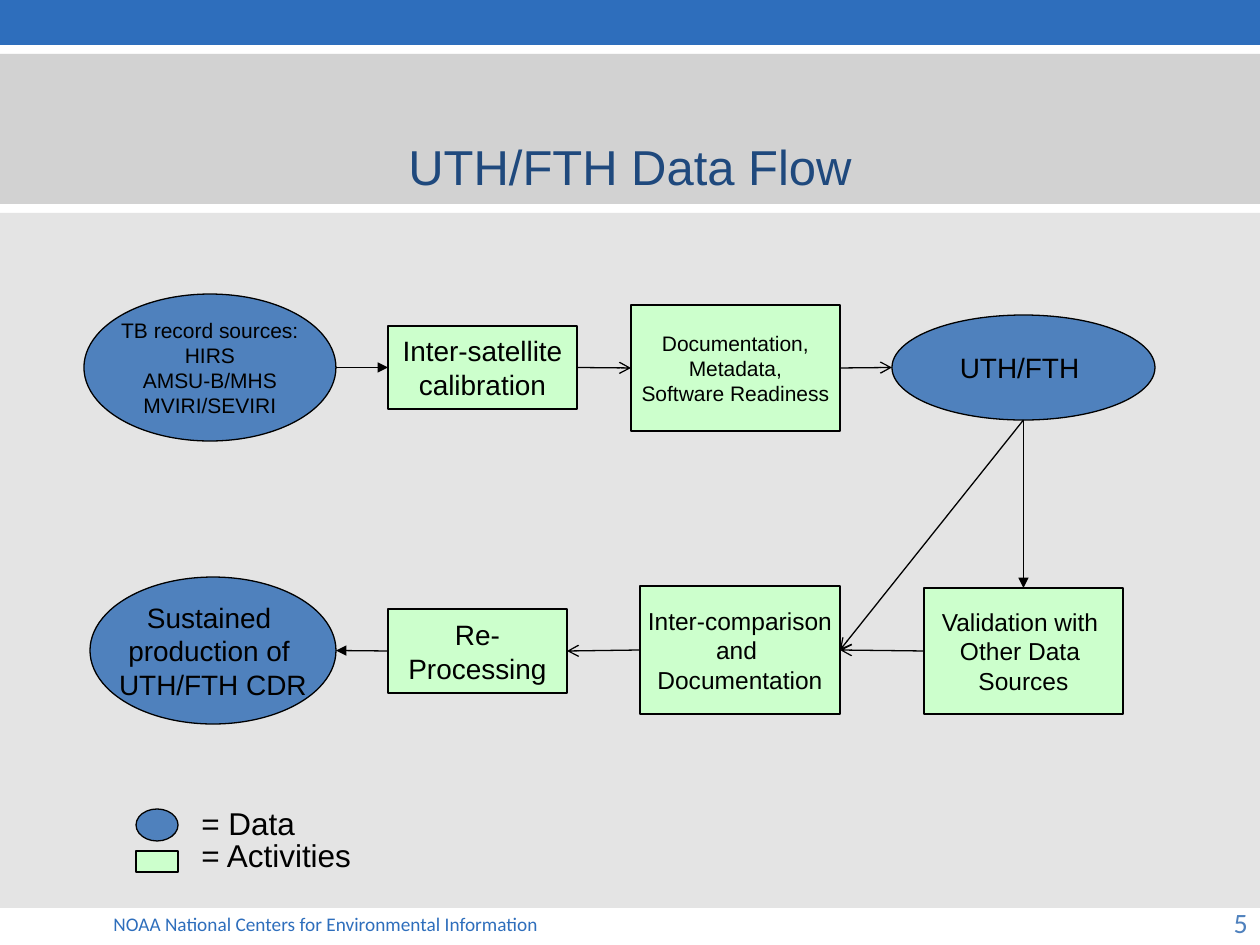
from lxml import etree
from pptx import Presentation
from pptx.dml.color import RGBColor
from pptx.enum.shapes import MSO_CONNECTOR, MSO_SHAPE
from pptx.enum.text import MSO_ANCHOR, PP_ALIGN
from pptx.oxml.ns import qn
from pptx.util import Pt

EMU_PER_PX = 914400 / 126
LEFT, CENTER, RIGHT = PP_ALIGN.LEFT, PP_ALIGN.CENTER, PP_ALIGN.RIGHT
TOP, MIDDLE = MSO_ANCHOR.TOP, MSO_ANCHOR.MIDDLE
RECTANGLE, ELLIPSE = MSO_SHAPE.RECTANGLE, MSO_SHAPE.OVAL
DATA, ACTIVITY = MSO_SHAPE.FLOWCHART_CONNECTOR, MSO_SHAPE.FLOWCHART_PROCESS
STRAIGHT = MSO_CONNECTOR.STRAIGHT

BLACK = RGBColor(0x00, 0x00, 0x00)
HEADER_BLUE = RGBColor(0x2E, 0x6E, 0xBC)
TITLE_BLUE = RGBColor(0x1F, 0x49, 0x7D)
DATA_BLUE = RGBColor(0x4F, 0x81, 0xBD)
ACTIVITY_GREEN = RGBColor(0xCC, 0xFF, 0xCC)
TITLE_GRAY = RGBColor(0xBF, 0xBF, 0xBF)
BODY_GRAY = RGBColor(0xD9, 0xD9, 0xD9)


def emu(*lengths):
    return [round(length * EMU_PER_PX) for length in lengths]


def write(shape, text, size, font="Arial", color=BLACK, align=CENTER,
          anchor=MIDDLE, wrap=False):
    frame = shape.text_frame
    frame.text = text
    frame.word_wrap = wrap
    frame.vertical_anchor = anchor
    for paragraph in frame.paragraphs:
        paragraph.alignment = align
        paragraph.font.size = Pt(size)
        paragraph.font.name = font
        paragraph.font.color.rgb = color


prs = Presentation()
prs.slide_width, prs.slide_height = emu(1260, 945)
slide = prs.slides.add_slide(prs.slide_layouts[5])
shapes = slide.shapes

# Background bands; the title goes in front of them
for top, height, color, opacity in [
    (0, 45, HEADER_BLUE, 100),
    (213, 695, BODY_GRAY, 70),
    (54, 150, TITLE_GRAY, 70),
]:
    band = shapes.add_shape(RECTANGLE, *emu(0, top, 1260, height))
    band.shadow.inherit = False
    band.fill.solid()
    band.fill.fore_color.rgb = color
    band.line.fill.background()
    if opacity < 100:
        rgb = band.element.spPr.find(f"{qn('a:solidFill')}/{qn('a:srgbClr')}")
        etree.SubElement(rgb, qn("a:alpha"), val=str(opacity * 1000))

title = shapes.title
band.element.addnext(title.element)
title.left, title.top, title.width, title.height = emu(63, 87, 1134, 158)
write(title, "UTH/FTH Data Flow", 28, color=TITLE_BLUE, wrap=True)

# Footer, page number and legend labels
for box, text, size, style in [
    ((101, 906, 1058, 37), "NOAA National Centers for Environmental Information", 11,
     dict(font="Calibri", color=HEADER_BLUE, align=LEFT, anchor=TOP, wrap=True)),
    ((966, 897, 294, 50), "5", 16,
     dict(font="Calibri", color=DATA_BLUE, align=RIGHT, wrap=True)),
    ((189, 798, 126, 50), "= Data", 18, dict(align=LEFT, anchor=TOP, wrap=True)),
    ((189, 830, 182, 50), "= Activities", 18, dict(align=LEFT, anchor=TOP, wrap=True)),
]:
    write(shapes.add_textbox(*emu(*box)), text, size, **style)

# Flow steps and legend keys: name, kind, box, text, size
steps = [
    ("sources", DATA, (84, 294, 252, 147),
     "TB record sources:\nHIRS\nAMSU-B/MHS\nMVIRI/SEVIRI", 12),
    ("calibration", ACTIVITY, (388, 326, 189, 83), "Inter-satellite\ncalibration", 16),
    ("readiness", ACTIVITY, (631, 305, 209, 126),
     "Documentation,\nMetadata,\nSoftware Readiness", 12),
    ("humidity", DATA, (892, 315, 263, 105), "UTH/FTH ", 16),
    ("validation", ACTIVITY, (924, 588, 199, 126),
     "Validation with \nOther Data \nSources", 14),
    ("comparison", ACTIVITY, (640, 586, 200, 128),
     "Inter-comparison\nand \nDocumentation", 14),
    ("reprocessing", ACTIVITY, (388, 609, 179, 84), "Re-\nProcessing", 16),
    ("production", DATA, (90, 577, 246, 147),
     "Sustained \nproduction of \nUTH/FTH CDR", 16),
    ("data key", ELLIPSE, (136, 809, 42, 32), "", 0),
    ("activity key", RECTANGLE, (136, 851, 42, 21), "", 0),
]
nodes = {}
for name, kind, box, text, size in steps:
    node = nodes[name] = shapes.add_shape(kind, *emu(*box))
    node.shadow.inherit = False
    node.fill.solid()
    node.fill.fore_color.rgb = DATA_BLUE if kind in (DATA, ELLIPSE) else ACTIVITY_GREEN
    node.line.color.rgb = BLACK
    node.line.width = Pt(0.75)
    if text:
        write(node, text, size)

# Arrows run between side midpoints; sides are 0 top, 1 left, 2 bottom, 3 right
SIDE_FRACTIONS = [(0.5, 0), (0, 0.5), (0.5, 1), (1, 0.5)]
for source, source_side, target, target_side, head in [
    ("sources", 3, "calibration", 1, "triangle"),
    ("calibration", 3, "readiness", 1, "arrow"),
    ("readiness", 3, "humidity", 1, "arrow"),
    ("humidity", 2, "validation", 0, "triangle"),
    ("humidity", 2, "comparison", 3, "arrow"),
    ("validation", 1, "comparison", 3, "arrow"),
    ("comparison", 1, "reprocessing", 3, "arrow"),
    ("reprocessing", 1, "production", 3, "triangle"),
]:
    ends = []
    for name, side in [(source, source_side), (target, target_side)]:
        node, (across, down) = nodes[name], SIDE_FRACTIONS[side]
        ends += [round(node.left + across * node.width),
                 round(node.top + down * node.height)]
    arrow = shapes.add_connector(STRAIGHT, *ends)
    # Only rectangles number their connection sites by side
    if nodes[source].auto_shape_type == ACTIVITY:
        arrow.begin_connect(nodes[source], source_side)
    if nodes[target].auto_shape_type == ACTIVITY:
        arrow.end_connect(nodes[target], target_side)
    arrow.line.color.rgb = BLACK
    arrow.line.width = Pt(0.75)
    etree.SubElement(arrow.line._get_or_add_ln(), qn("a:tailEnd"), type=head)
    etree.SubElement(arrow.element.spPr, qn("a:effectLst"))

prs.save("out.pptx")
